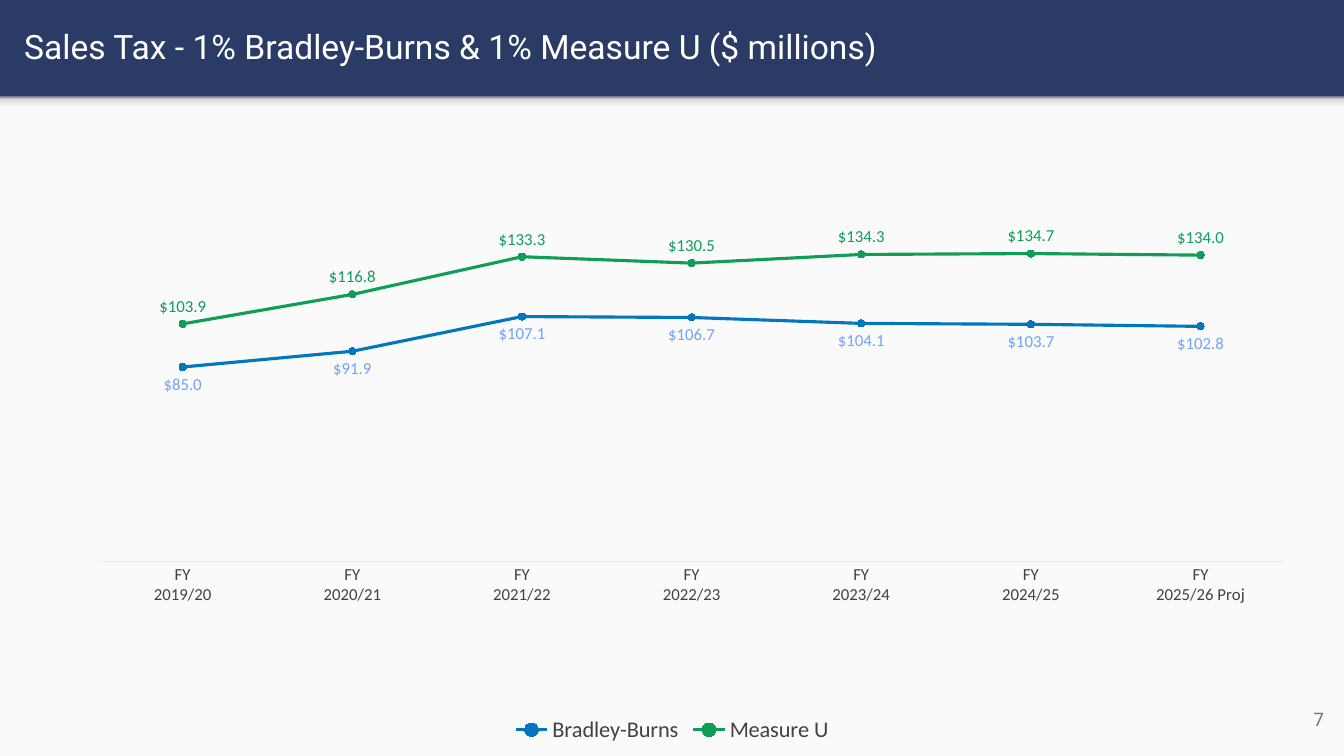
import copy
from dataclasses import dataclass

import lxml.etree
import pptx
import pptx.chart.data
import pptx.dml.color
import pptx.enum.chart
import pptx.enum.shapes
import pptx.enum.text
import pptx.oxml.ns
import pptx.util

SLIDE_WIDTH = pptx.util.Inches(13.33)
SLIDE_HEIGHT = pptx.util.Inches(7.5)
COLUMNS = ROWS = 100
DOLLARS = '"$"#,##0.0'
YEARS = ["2019/20", "2020/21", "2021/22", "2022/23", "2023/24", "2024/25", "2025/26 Proj"]


@dataclass(frozen=True)
class Area:
    """A block of the slide grid, in columns and rows."""
    column: float
    row: float
    columns: float
    rows: float

    def box(self) -> tuple[int, int, int, int]:
        return (round(self.column * SLIDE_WIDTH / COLUMNS),
                round(self.row * SLIDE_HEIGHT / ROWS),
                round(self.columns * SLIDE_WIDTH / COLUMNS),
                round(self.rows * SLIDE_HEIGHT / ROWS))


@dataclass(frozen=True)
class TaxLine:
    name: str
    color: str
    label_color: str
    label_position: pptx.enum.chart.XL_LABEL_POSITION
    millions: tuple[float, ...]


@dataclass(frozen=True)
class GradientStop:
    position: float
    color: str


BODY = Area(0, 12.8, 100, 87.2)
HEADER_SHADOW = Area(0, 12.8, 100, 2.13)
TITLE = Area(1.05, 0.27, 96.55, 11.73)
PAGE_NUMBER = Area(93.25, 91.33, 6, 7.6)
CHART = Area(2.85, 19.47, 94.3, 79.47)
PLOT_SHARES = {"x": 0.047, "y": 0.081, "w": 0.937, "h": 0.608}

SHADOW_STOPS = [GradientStop(0, "F9F9F9"), GradientStop(0.36, "F9F9F9"),
                GradientStop(0.8, "DEDEDE"), GradientStop(1, "999999")]

TAX_LINES = [
    TaxLine("Bradley-Burns", "0277BD", "71A3F7", pptx.enum.chart.XL_LABEL_POSITION.BELOW,
            (85, 91.9, 107.1, 106.7, 104.1, 103.7, 102.8)),
    TaxLine("Measure U", "0F9D58", "0F9D58", pptx.enum.chart.XL_LABEL_POSITION.ABOVE,
            (103.9, 116.8, 133.3, 130.5, 134.3, 134.7, 134)),
]


def rgb(color: str) -> pptx.dml.color.RGBColor:
    return pptx.dml.color.RGBColor.from_string(color)


def set_font(font, name: str, size: float, color: str) -> None:
    font.name = name
    font.size = pptx.util.Pt(size)
    font.color.rgb = rgb(color)


def paint(fill, color: str) -> None:
    fill.solid()
    fill.fore_color.rgb = rgb(color)


def add_band(slide, area: Area):
    """Add a full-width rectangle without outline or shadow."""
    band = slide.shapes.add_shape(pptx.enum.shapes.MSO_SHAPE.RECTANGLE, *area.box())
    band.shadow.inherit = False
    band.line.fill.background()
    return band


def fade(band, stops: list[GradientStop]) -> None:
    """Fill the band with a gradient that runs from bottom to top."""
    band.fill.gradient()
    band.fill.gradient_angle = 90
    stop_list = next(band._element.iter(pptx.oxml.ns.qn("a:gsLst")))
    while len(stop_list) < len(stops):
        stop_list.append(copy.deepcopy(stop_list[0]))
    for gradient_stop, stop in zip(band.fill.gradient_stops, stops):
        gradient_stop.position = stop.position
        gradient_stop.color.rgb = rgb(stop.color)


def write(holder, text: str, size: float, color: str,
          alignment: pptx.enum.text.PP_ALIGN) -> None:
    frame = holder.text_frame
    frame.text = text
    frame.word_wrap = True
    frame.auto_size = pptx.enum.text.MSO_AUTO_SIZE.NONE
    frame.vertical_anchor = pptx.enum.text.MSO_ANCHOR.MIDDLE
    frame.margin_left = frame.margin_right = pptx.util.Inches(0.1)
    frame.margin_top = frame.margin_bottom = pptx.util.Inches(0.1)
    paragraph = frame.paragraphs[0]
    paragraph.alignment = alignment
    set_font(paragraph.font, "Roboto", size, color)


def fix_plot_area(chart) -> None:
    """Place the inner plot area at fixed shares of the chart."""
    qn = pptx.oxml.ns.qn
    plot_area = next(chart._chartSpace.iter(qn("c:plotArea")))
    for layout in plot_area.findall(qn("c:layout")):
        plot_area.remove(layout)
    layout = lxml.etree.Element(qn("c:layout"))
    plot_area.insert(0, layout)
    manual = lxml.etree.SubElement(layout, qn("c:manualLayout"))
    settings = {"layoutTarget": "inner", "xMode": "edge", "yMode": "edge", **PLOT_SHARES}
    for tag, value in settings.items():
        lxml.etree.SubElement(manual, qn(f"c:{tag}")).set("val", str(value))


def style_series(series, tax: TaxLine) -> None:
    series.smooth = False
    series.format.line.width = pptx.util.Pt(2.25)
    series.format.line.color.rgb = rgb(tax.color)
    series.marker.style = pptx.enum.chart.XL_MARKER_STYLE.CIRCLE
    series.marker.size = 5
    paint(series.marker.format.fill, tax.color)
    series.marker.format.line.color.rgb = rgb(tax.color)
    labels = series.data_labels
    labels.show_value = True
    labels.position = tax.label_position
    labels.number_format = DOLLARS
    labels.number_format_is_linked = False
    set_font(labels.font, "Calibri", 12, tax.label_color)


def add_tax_chart(slide) -> None:
    tax_data = pptx.chart.data.CategoryChartData(number_format=DOLLARS)
    tax_data.categories = [f"FY\n{year}" for year in YEARS]
    for tax in TAX_LINES:
        tax_data.add_series(tax.name, tax.millions)
    chart = slide.shapes.add_chart(
        pptx.enum.chart.XL_CHART_TYPE.LINE_MARKERS, *CHART.box(), tax_data).chart
    chart.has_title = False
    set_font(chart.font, "Calibri", 10, "4285F4")
    fix_plot_area(chart)

    chart.has_legend = True
    chart.legend.position = pptx.enum.chart.XL_LEGEND_POSITION.BOTTOM
    chart.legend.include_in_layout = False
    set_font(chart.legend.font, "Calibri", 16, "424242")

    years = chart.category_axis
    years.major_tick_mark = pptx.enum.chart.XL_TICK_MARK.NONE
    years.format.line.color.rgb = rgb("E3EDFD")
    years.format.line.width = pptx.util.Pt(0.75)
    set_font(years.tick_labels.font, "Calibri", 12, "424242")

    millions = chart.value_axis
    millions.minimum_scale = 0
    millions.maximum_scale = 160
    millions.has_major_gridlines = False
    millions.visible = False

    chart.plots[0].vary_by_categories = False
    for series, tax in zip(chart.plots[0].series, TAX_LINES):
        style_series(series, tax)


def main() -> None:
    deck = pptx.Presentation()
    deck.slide_width, deck.slide_height = SLIDE_WIDTH, SLIDE_HEIGHT
    slide = deck.slides.add_slide(deck.slide_layouts.get_by_name("Title Only"))
    paint(slide.background.fill, "2A3B66")

    paint(add_band(slide, BODY).fill, "FAFAFA")
    fade(add_band(slide, HEADER_SHADOW), SHADOW_STOPS)

    title = slide.shapes.title
    title.left, title.top, title.width, title.height = TITLE.box()
    write(title, "Sales Tax - 1% Bradley-Burns & 1% Measure U ($ millions)",
          24, "FFFFFF", pptx.enum.text.PP_ALIGN.LEFT)
    page_number = slide.shapes.add_textbox(*PAGE_NUMBER.box())
    write(page_number, "7", 13.3, "737373", pptx.enum.text.PP_ALIGN.RIGHT)

    add_tax_chart(slide)
    deck.save("out.pptx")


if __name__ == "__main__":
    main()
